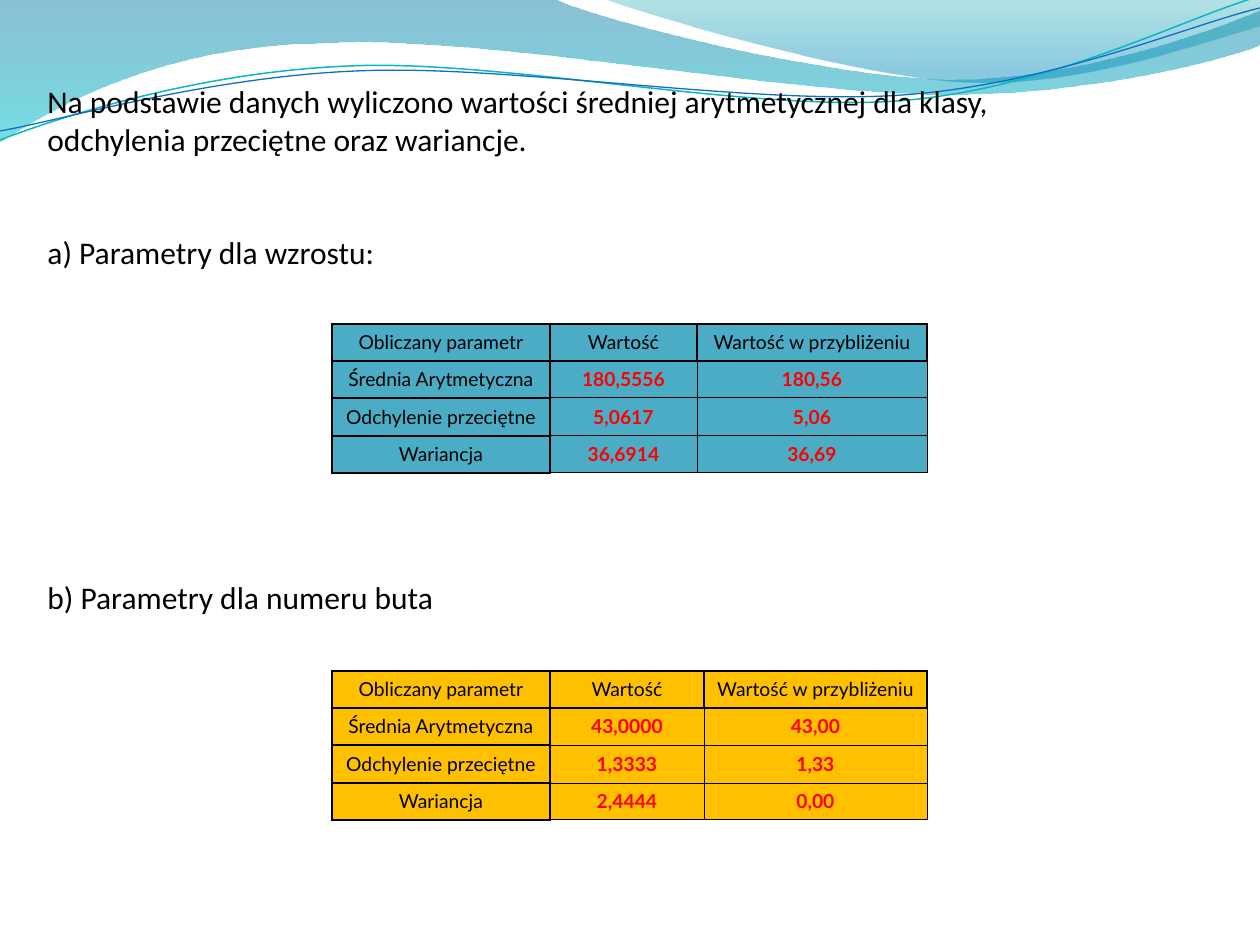
import math

import pptx
import pptx.util
import pptx.dml.color
import pptx.enum.text
import pptx.oxml
import pptx.oxml.ns

PX = 914400 / 126
NS = pptx.oxml.ns.nsdecls("a")


def px(n):
    return pptx.util.Emu(round(n * PX))


def rgb(value):
    return pptx.dml.color.RGBColor.from_string(value)


def format_font(font, color, **values):
    for name, value in values.items():
        setattr(font, name, value)
    font.color.rgb = rgb(color)


def turn(point, box, degrees):
    """Turn a point clockwise about the centre of the box."""
    left, top, width, height = box
    cx, cy = left + width / 2, top + height / 2
    x, y = point[0] - cx, point[1] - cy
    cos, sin = math.cos(math.radians(degrees)), math.sin(math.radians(degrees))
    return cx + x * cos - y * sin, cy + x * sin + y * cos


def add_path(slide, box, segments, close, rotation=0):
    """Segments are a start point, then line ends (1 point) or Bezier curves (3 points)."""
    segments = [[turn(pt, box, -rotation) for pt in segment] for segment in segments]
    builder = slide.shapes.build_freeform(*map(px, segments[0][0]), scale=1.0)
    builder.add_line_segments([tuple(map(px, s[-1])) for s in segments[1:]], close=close)
    sp = builder.convert_to_shape()
    sp.shadow.inherit = False
    for name, value in zip(("left", "top", "width", "height"), box):
        setattr(sp, name, px(value))
    sp.rotation = rotation

    # Curved segments
    path = sp._element.spPr.find(".//" + pptx.oxml.ns.qn("a:path"))
    path.set("w", str(px(box[2])))
    path.set("h", str(px(box[3])))
    for element, segment in zip(list(path), segments):
        if len(segment) == 3:
            points = "".join(f'<a:pt x="{px(x - box[0])}" y="{px(y - box[1])}"/>'
                             for x, y in segment)
            path.replace(element, pptx.oxml.parse_xml(
                f'<a:cubicBezTo {NS}>{points}</a:cubicBezTo>'))
        else:
            x, y = segment[0]
            element[0].set("x", str(px(x - box[0])))
            element[0].set("y", str(px(y - box[1])))
    return sp


def add_wave(slide, box, segments, stops):
    sp = add_path(slide, box, segments, True)
    sp.line.fill.background()
    sp.fill.gradient()
    sp.fill.gradient_angle = 270
    for stop, (position, color, _) in zip(sp.fill.gradient_stops, stops):
        stop.position = position
        stop.color.rgb = rgb(color)
    # Transparency of each stop
    colors = sp._element.spPr.findall(".//" + pptx.oxml.ns.qn("a:srgbClr"))
    for element, (_, _, alpha) in zip(colors, stops):
        element.append(pptx.oxml.parse_xml(f'<a:alpha {NS} val="{alpha * 1000}"/>'))


def add_thin_line(slide, box, segments, color, width):
    sp = add_path(slide, box, segments, False, rotation=357.3)
    sp.fill.background()
    sp.line.color.rgb = rgb(color)
    sp.line.width = pptx.util.Pt(width)


def add_header_waves(slide):
    add_wave(slide, (-1, -1, 1262, 143), [
        [(0, 0)], [(554, -1)],
        [(600, 21), (837, 79), (955, 79)], [(1075, 79), (1207, 33), (1260, 11)],
        [(1261, 45)],
        [(1239, 55), (1096, 96), (940, 94)], [(784, 94), (481, 35), (324, 43)],
        [(163, 45), (58, 105), (-1, 142)], [(0, 0)],
    ], [(0, "0074A1", 45), (1, "00C6CF", 55)])
    add_wave(slide, (604, -1, 656, 88), [
        [(604, -1)],
        [(641, 14), (859, 78), (969, 82)], [(1079, 87), (1211, 40), (1260, 26)],
        [(1260, 0)], [(604, -1)],
    ], [(0, "00A1A9", 30), (0.8, "008BBF", 45)])
    add_thin_line(slide, (-2, 28, 1262, 89), [
        [(0, 140)],
        [(60, 117), (199, 72), (349, 66)], [(498, 59), (747, 112), (898, 101)],
        [(1050, 89), (1182, 19), (1257, -3)],
    ], "0AB8BF", 0.85)
    add_thin_line(slide, (-2, 38, 1264, 73), [
        [(0, 131)],
        [(59, 121), (207, 77), (357, 71)], [(508, 64), (752, 106), (903, 95)],
        [(1053, 84), (1186, 26), (1260, 8)],
    ], "0F6FC6", 0.75)


def add_text(slide, box, paragraphs, gap=0):
    """Each paragraph is a list of lines; gap is the space between paragraphs in points."""
    tf = slide.shapes.add_textbox(*map(px, box)).text_frame
    tf.word_wrap = True
    tf.auto_size = pptx.enum.text.MSO_AUTO_SIZE.SHAPE_TO_FIT_TEXT
    for i, lines in enumerate(paragraphs):
        p = tf.add_paragraph() if i else tf.paragraphs[0]
        p.space_before = pptx.util.Pt(gap if i else 0)
        for j, line in enumerate(lines):
            if j:
                p.add_line_break()
            r = p.add_run()
            r.text = line
            format_font(r.font, "000000", name="Calibri", size=pptx.util.Pt(18))


def set_borders(cell, row, col):
    header = row == 0 or col == 0
    heavy = {"L": header or col == 1, "R": header, "T": header or row == 1, "B": header}
    for side, is_heavy in heavy.items():
        width = pptx.util.Pt(1.5 if is_heavy else 0.5)
        cell._tc.get_or_add_tcPr().append(pptx.oxml.parse_xml(
            f'<a:ln{side} {NS} w="{width}">'
            '<a:solidFill><a:srgbClr val="000000"/></a:solidFill>'
            f'</a:ln{side}>'))


def add_parameter_table(slide, left, top, widths, heights, values, fill):
    rows = [("Obliczany parametr", "Wartość", "Wartość w przybliżeniu")]
    names = ("Średnia Arytmetyczna", "Odchylenie przeciętne", "Wariancja")
    rows += [(name, *pair) for name, pair in zip(names, values)]
    box = map(px, (left, top, sum(widths), sum(heights)))
    table = slide.shapes.add_table(len(rows), len(widths), *box).table
    table.first_row = table.horz_banding = False
    for column, width in zip(table.columns, widths):
        column.width = px(width)
    for row, height in zip(table.rows, heights):
        row.height = px(height)

    cell_format = {"margin_left": 0, "margin_right": 0, "margin_top": 0, "margin_bottom": 0,
                   "vertical_anchor": pptx.enum.text.MSO_ANCHOR.MIDDLE}
    for i, texts in enumerate(rows):
        for j, text in enumerate(texts):
            cell = table.cell(i, j)
            for name, value in cell_format.items():
                setattr(cell, name, value)
            set_borders(cell, i, j)
            cell.fill.solid()
            cell.fill.fore_color.rgb = rgb(fill)
            p = cell.text_frame.paragraphs[0]
            p.alignment = pptx.enum.text.PP_ALIGN.CENTER
            r = p.add_run()
            r.text = text
            is_value = i > 0 and j > 0
            format_font(r.font, "FF0000" if is_value else "000000",
                        name="Lato", size=pptx.util.Pt(11), bold=is_value)


def main():
    prs = pptx.Presentation()
    prs.slide_width, prs.slide_height = px(1260), px(945)
    slide = prs.slides.add_slide(prs.slide_layouts[6])

    add_header_waves(slide)

    # Introduction and height parameters
    add_text(slide, (35, 76, 1191, 204), [
        ["Na podstawie danych wyliczono wartości średniej arytmetycznej dla klasy,",
         "odchylenia przeciętne oraz wariancje."],
        ["a) Parametry dla wzrostu:"],
    ], gap=43)
    heights = (37, 37, 38, 37)
    add_parameter_table(slide, 332, 324, (218, 147, 230), heights,
                        [("180,5556", "180,56"), ("5,0617", "5,06"), ("36,6914", "36,69")],
                        "4BACC6")

    # Shoe size parameters
    add_text(slide, (35, 572, 476, 50), [["b) Parametry dla numeru buta"]])
    add_parameter_table(slide, 332, 671, (218, 154, 223), heights,
                        [("43,0000", "43,00"), ("1,3333", "1,33"), ("2,4444", "0,00")],
                        "FFC000")

    prs.save("out.pptx")


if __name__ == "__main__":
    main()
